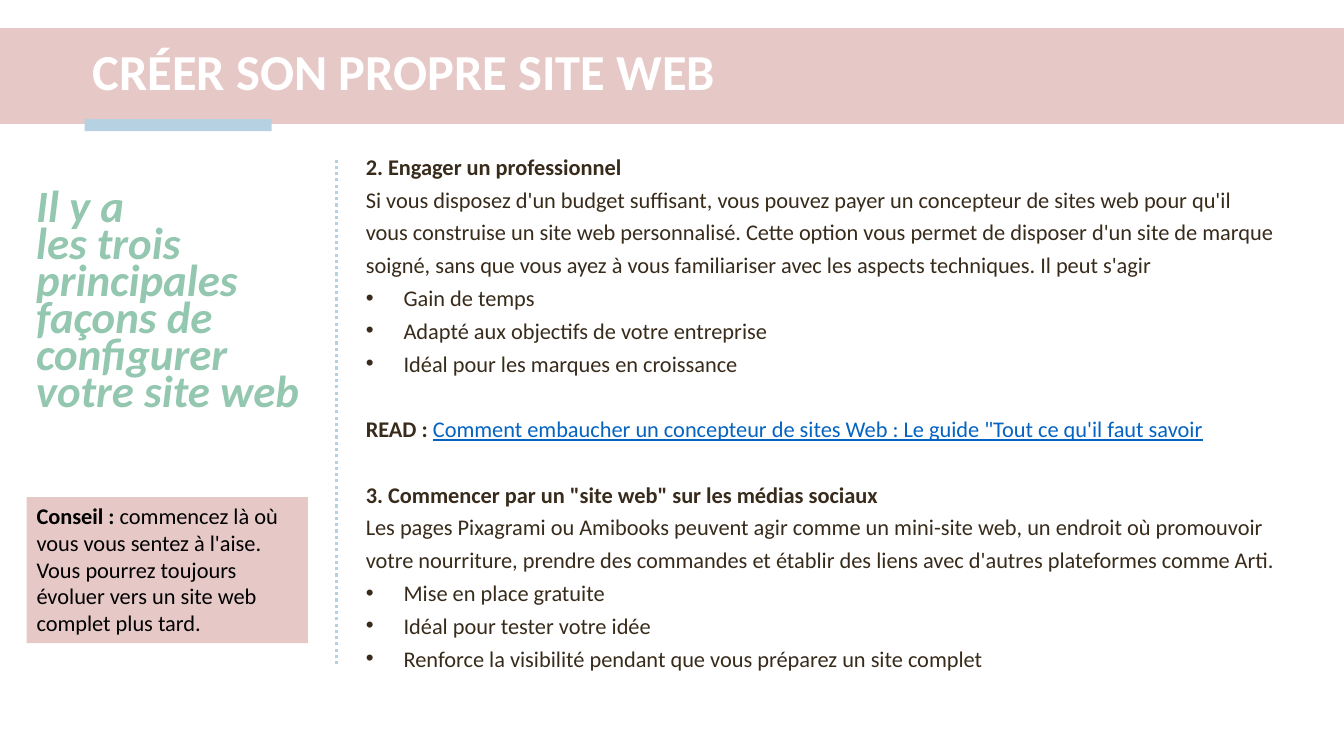
import pptx
import pptx.dml.color
import pptx.enum.dml
import pptx.enum.shapes
import pptx.enum.text
import pptx.oxml.ns
import pptx.util
from lxml import etree

Pt = pptx.util.Pt
RGBColor = pptx.dml.color.RGBColor
qn = pptx.oxml.ns.qn

PINK = RGBColor(0xE6, 0xC8, 0xC7)
BLUE = RGBColor(0xB6, 0xD1, 0xE1)
GREEN = RGBColor(0x94, 0xC7, 0xB0)
BROWN = RGBColor(0x38, 0x2B, 0x1B)
LINK = RGBColor(0x05, 0x63, 0xC1)
WHITE = RGBColor(0xFF, 0xFF, 0xFF)
BLACK = RGBColor(0, 0, 0)
LEFT = pptx.enum.text.PP_ALIGN.LEFT
MIDDLE = pptx.enum.text.MSO_ANCHOR.MIDDLE
TOP = pptx.enum.text.MSO_ANCHOR.TOP


def add_run(paragraph, text, size=16, color=BROWN, bold=False, italic=False, underline=False):
    run = paragraph.add_run()
    run.text = text
    run.font.name = "Calibri"
    run.font.size = Pt(size)
    run.font.color.rgb = color
    run.font.bold = bold
    run.font.italic = italic
    run.font.underline = underline


def add_rectangle(left, top, width, height, color):
    shape = slide.shapes.add_shape(pptx.enum.shapes.MSO_SHAPE.RECTANGLE,
                                   Pt(left), Pt(top), Pt(width), Pt(height))
    shape.shadow.inherit = False
    shape.fill.solid()
    shape.fill.fore_color.rgb = color
    shape.line.fill.background()
    return shape


presentation = pptx.Presentation()
presentation.slide_width = Pt(960)
presentation.slide_height = Pt(540)
slide = presentation.slides.add_slide(presentation.slide_layouts[5])

# Title band with its accent bar
add_rectangle(0, 20, 960, 68.5, PINK)
add_rectangle(60.5, 85, 133.5, 8.6, BLUE)

# Title, brought in front of the band
title = slide.shapes.title
slide.shapes._spTree.append(title._element)
title.left, title.top, title.width, title.height = Pt(59), Pt(24.5), Pt(859), Pt(57)
title.text_frame.auto_size = pptx.enum.text.MSO_AUTO_SIZE.NONE
title.text_frame.vertical_anchor = MIDDLE
title_paragraph = title.text_frame.paragraphs[0]
title_paragraph.alignment = LEFT
title_paragraph.line_spacing = 0.9
add_run(title_paragraph, "CRÉER SON PROPRE SITE WEB", size=36, color=WHITE, bold=True)

# Left heading
heading = slide.shapes.add_textbox(Pt(18.8), Pt(135.4), Pt(222), Pt(186.5)).text_frame
heading.word_wrap = True
heading_lines = ["Il y a", "les trois principales façons de configurer votre site web"]
for index, text in enumerate(heading_lines):
    paragraph = heading.add_paragraph() if index else heading.paragraphs[0]
    paragraph.line_spacing = Pt(26.4)
    add_run(paragraph, text, size=32, color=GREEN, bold=True, italic=True)

# Main text: kind of paragraph, wording
body_paragraphs = [
    ("heading", "2. Engager un professionnel"),
    ("text", "Si vous disposez d'un budget suffisant, vous pouvez payer un concepteur de sites "
             "web pour qu'il vous construise un site web personnalisé. Cette option vous permet "
             "de disposer d'un site de marque soigné, sans que vous ayez à vous familiariser "
             "avec les aspects techniques. Il peut s'agir"),
    ("bullet", "Gain de temps"),
    ("bullet", "Adapté aux objectifs de votre entreprise"),
    ("bullet", "Idéal pour les marques en croissance"),
    ("link", "Comment embaucher un concepteur de sites Web : "
             "Le guide \"Tout ce qu'il faut savoir"),
    ("heading", "3. Commencer par un \"site web\" sur les médias sociaux"),
    ("text", "Les pages Pixagrami ou Amibooks peuvent agir comme un mini-site web, un endroit où "
             "promouvoir votre nourriture, prendre des commandes et établir des liens avec "
             "d'autres plateformes comme Arti."),
    ("bullet", "Mise en place gratuite"),
    ("bullet", "Idéal pour tester votre idée"),
    ("bullet", "Renforce la visibilité pendant que vous préparez un site complet"),
]
body = slide.shapes.add_textbox(Pt(254.2), Pt(101.5), Pt(664), Pt(410)).text_frame
body.word_wrap = True
for index, (kind, text) in enumerate(body_paragraphs):
    paragraph = body.add_paragraph() if index else body.paragraphs[0]
    if kind == "bullet":
        properties = paragraph._p.get_or_add_pPr()
        properties.set("marL", str(Pt(27)))
        properties.set("indent", str(-Pt(27)))
        etree.SubElement(properties, qn("a:buFont")).set("typeface", "Arial")
        etree.SubElement(properties, qn("a:buChar")).set("char", "•")
    paragraph.line_spacing = Pt(23.4)
    if index and kind in ("heading", "link"):
        paragraph.space_before = Pt(23.4)
    if kind == "link":
        add_run(paragraph, "READ : ", bold=True)
        add_run(paragraph, text, color=LINK, underline=True)
    else:
        add_run(paragraph, text, bold=kind == "heading")

# Dotted divider
divider = slide.shapes.add_connector(pptx.enum.shapes.MSO_CONNECTOR.STRAIGHT,
                                     Pt(240.5), Pt(474.5), Pt(240.5), Pt(114.5))
divider.line.color.rgb = BLUE
divider.line.width = Pt(2.25)
divider.line.dash_style = pptx.enum.dml.MSO_LINE.ROUND_DOT
etree.SubElement(divider._element.spPr, qn("a:effectLst"))

# Advice box
advice = add_rectangle(19, 355, 201, 104.4, PINK).text_frame
advice.word_wrap = True
advice.vertical_anchor = TOP
advice_paragraph = advice.paragraphs[0]
advice_paragraph.alignment = LEFT
add_run(advice_paragraph, "Conseil : ", color=BLACK, bold=True)
add_run(advice_paragraph, "commencez là où vous vous sentez à l'aise. Vous pourrez toujours "
                          "évoluer vers un site web complet plus tard.", color=BLACK)

presentation.save("out.pptx")
